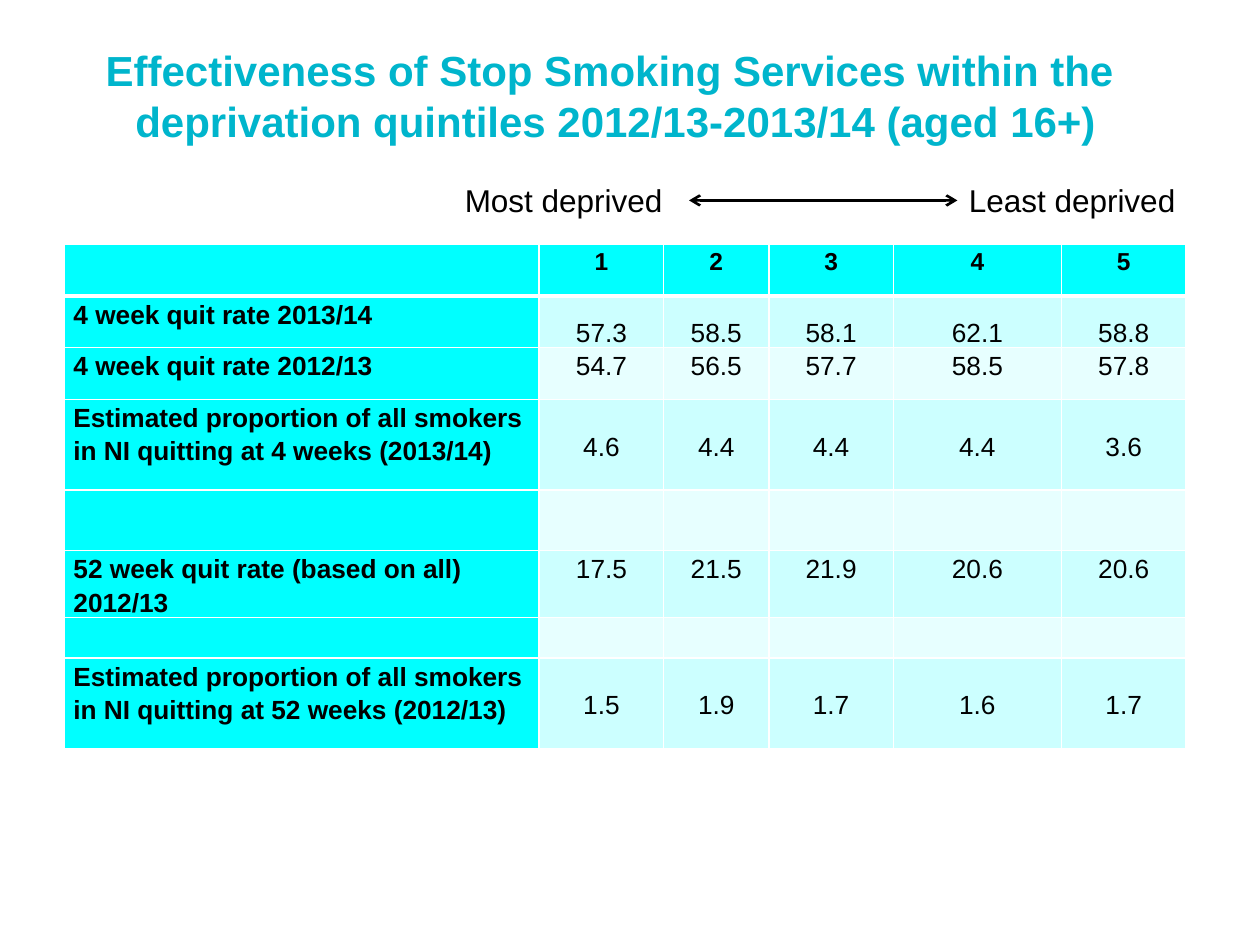
from dataclasses import dataclass

from lxml.etree import SubElement
from pptx import Presentation
from pptx.dml.color import RGBColor as Color
from pptx.enum.shapes import MSO_CONNECTOR as Connector
from pptx.enum.text import MSO_ANCHOR as Anchor, MSO_AUTO_SIZE as AutoSize, PP_ALIGN as Align
from pptx.oxml.ns import qn
from pptx.util import Cm, Pt


@dataclass(frozen=True)
class Theme:
    font: str = "Arial"
    title: str = "00B5CC"
    text: str = "000000"
    heading_fill: str = "00FFFF"
    bands: tuple = ("CCFFFF", "E7FFFF")
    border: str = "FFFFFF"
    title_size: int = 24
    label_size: int = 18
    heading_size: int = 14
    cell_size: int = 15


class SlideBuilder:
    def __init__(self, slide, theme):
        self.slide = slide
        self.theme = theme

    def format_font(self, font, size, color, bold=False):
        font.name = self.theme.font
        font.size = Pt(size)
        font.bold = bold
        font.color.rgb = Color.from_string(color)

    def title(self, text, left, top, width, height):
        shape = self.slide.shapes.title
        shape.left, shape.top, shape.width, shape.height = map(Cm, (left, top, width, height))
        frame = shape.text_frame
        frame.text = text
        frame.word_wrap = False
        frame.auto_size = AutoSize.NONE
        frame.vertical_anchor = Anchor.MIDDLE
        paragraph = frame.paragraphs[0]
        paragraph.alignment = Align.CENTER
        for run in paragraph.runs:
            self.format_font(run.font, self.theme.title_size, self.theme.title, True)

    def tabbed_label(self, text, stops, left, top, width, height):
        shape = self.slide.shapes.add_textbox(*map(Cm, (left, top, width, height)))
        frame = shape.text_frame
        frame.word_wrap = True
        frame.text = text
        paragraph = frame.paragraphs[0]
        tabs = SubElement(paragraph._p.get_or_add_pPr(), qn("a:tabLst"))
        for stop in stops:
            SubElement(tabs, qn("a:tab"), pos=str(Cm(stop)), algn="l")
        for run in paragraph.runs:
            self.format_font(run.font, self.theme.label_size, self.theme.text)

    def double_arrow(self, left, right, y):
        connector = self.slide.shapes.add_connector(
            Connector.STRAIGHT, Cm(left), Cm(y), Cm(right), Cm(y))
        connector.line.color.rgb = Color.from_string(self.theme.text)
        connector.line.width = Pt(1.5)
        line = connector.line._get_or_add_ln()
        for end in ("a:headEnd", "a:tailEnd"):
            SubElement(line, qn(end), type="arrow")
        SubElement(connector._element.spPr, qn("a:effectLst"))

    def border(self, cell, side, width):
        line = SubElement(cell._tc.get_or_add_tcPr(), qn(f"a:ln{side}"), w=str(Pt(width)))
        fill = SubElement(line, qn("a:solidFill"))
        SubElement(fill, qn("a:srgbClr"), val=self.theme.border)

    def cell(self, cell, text, row, column, anchor):
        theme = self.theme
        heading = row == 0 or column == 0
        for side in "LRTB":
            thick = (row, side) in ((0, "B"), (1, "T"))
            self.border(cell, side, 3 if thick else 1)
        cell.fill.solid()
        cell.fill.fore_color.rgb = Color.from_string(
            theme.heading_fill if heading else theme.bands[(row - 1) % 2])
        cell.margin_left = cell.margin_right = Cm(0.18)
        cell.margin_top = cell.margin_bottom = 0
        cell.vertical_anchor = Anchor.TOP if heading else anchor
        cell.text_frame.text = text
        paragraph = cell.text_frame.paragraphs[0]
        paragraph.alignment = Align.CENTER if column else Align.LEFT
        paragraph.line_spacing = 1.15
        size = theme.cell_size if row else theme.heading_size
        self.format_font(paragraph.font, size, theme.text, heading)
        for run in paragraph.runs:
            self.format_font(run.font, size, theme.text, heading)

    def table(self, rows, widths, left, top):
        shape = self.slide.shapes.add_table(
            len(rows), len(widths), Cm(left), Cm(top),
            Cm(sum(widths)), Cm(sum(height for height, *_ in rows)))
        table = shape.table
        for column, width in zip(table.columns, widths):
            column.width = Cm(width)
        for row, (height, anchor, label, values) in enumerate(rows):
            table.rows[row].height = Cm(height)
            texts = [label] + (values.split() or [""] * (len(widths) - 1))
            for column, text in enumerate(texts):
                self.cell(table.cell(row, column), text, row, column, anchor)


def main():
    presentation = Presentation()
    presentation.slide_width, presentation.slide_height = Cm(25.4), Cm(19.05)
    slide = presentation.slides.add_slide(presentation.slide_layouts[5])
    builder = SlideBuilder(slide, Theme())
    builder.title(
        "Effectiveness of Stop Smoking Services within the \v"
        "deprivation quintiles 2012/13-2013/14 (aged 16+)",
        0.89, 0.13, 23.04, 3.58)
    rows = [
        (1.04, Anchor.TOP, "", "1 2 3 4 5"),
        (1.04, Anchor.BOTTOM, "4 week quit rate 2013/14", "57.3 58.5 58.1 62.1 58.8"),
        (1.04, Anchor.TOP, "4 week quit rate 2012/13", "54.7 56.5 57.7 58.5 57.8"),
        (1.83, Anchor.MIDDLE,
         "Estimated proportion of all smokers in NI quitting at 4 weeks (2013/14)",
         "4.6 4.4 4.4 4.4 3.6"),
        (1.22, Anchor.TOP, "", ""),
        (1.35, Anchor.TOP, "52 week quit rate (based on all) 2012/13",
         "17.5 21.5 21.9 20.6 20.6"),
        (0.81, Anchor.TOP, "", ""),
        (1.83, Anchor.MIDDLE,
         "Estimated proportion of all smokers in NI quitting at 52 weeks (2012/13)",
         "1.5 1.9 1.7 1.6 1.7"),
    ]
    builder.table(rows, (9.57, 2.51, 2.12, 2.51, 3.39, 2.51), 1.3, 4.93)
    builder.tabbed_label("\tMost deprived\tLeast deprived", (7.62, 17.78), 1.5, 3.53, 23.6, 1.02)
    builder.double_arrow(13.89, 19.3, 4.04)
    presentation.save("out.pptx")


if __name__ == "__main__":
    main()
